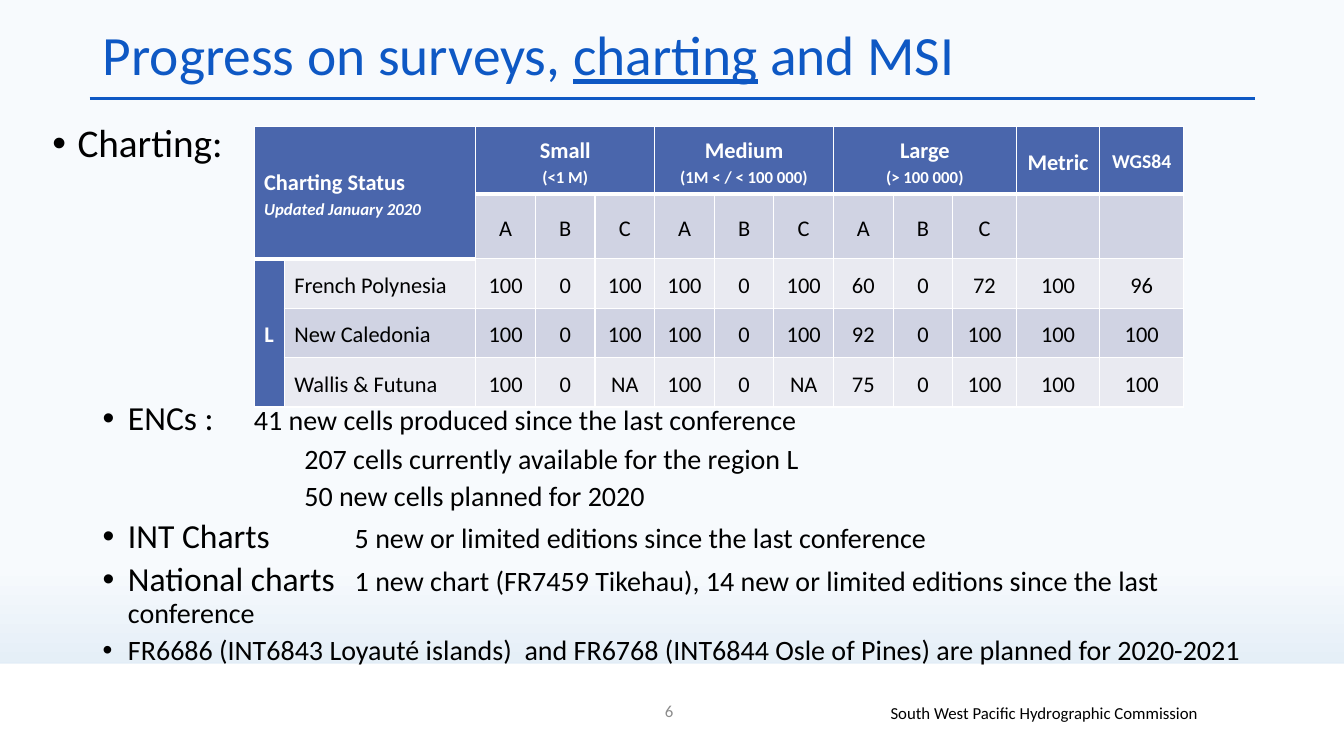
from dataclasses import dataclass

from lxml.etree import SubElement
from pptx import Presentation
from pptx.dml.color import RGBColor
from pptx.enum.shapes import MSO_CONNECTOR, MSO_SHAPE
from pptx.enum.text import MSO_ANCHOR, MSO_AUTO_SIZE, PP_ALIGN
from pptx.oxml.ns import qn
from pptx.util import Pt

FONT = "Calibri"
BLUE = RGBColor(0x0E, 0x58, 0xC4)
HEADER_BLUE = RGBColor(0x4A, 0x66, 0xAC)
BAND_DARK = RGBColor(0xD0, 0xD3, 0xE3)
BAND_LIGHT = RGBColor(0xE9, 0xEA, 0xF1)
SKY_TOP = RGBColor(0xF7, 0xFA, 0xFD)
SKY_BOTTOM = RGBColor(0xD0, 0xE2, 0xF1)
WHITE = RGBColor(0xFF, 0xFF, 0xFF)
BLACK = RGBColor(0, 0, 0)
GREY = RGBColor(0x8C, 0x8C, 0x8C)


@dataclass(frozen=True)
class Span:
    text: str
    size: float
    color: RGBColor = BLACK
    bold: bool = False
    italic: bool = False
    underline: bool = False


@dataclass(frozen=True)
class Item:
    spans: tuple[Span, ...]
    level: int = 1
    margin: float = 54
    before: float = 5
    bullet: bool = True


@dataclass(frozen=True)
class Header:
    lines: tuple[Span, ...]
    column: int
    rows: int = 1
    columns: int = 1
    align: PP_ALIGN = PP_ALIGN.CENTER


def white(text: str, size: float, italic: bool = False) -> Span:
    return Span(text, size, WHITE, bold=True, italic=italic)


HEADERS = (
    Header((white("Charting Status", 16), white("Updated January 2020", 12, True)),
           0, 2, 2, PP_ALIGN.JUSTIFY),
    Header((white("Small", 16), white("(<1 M)", 12)), 2, columns=3),
    Header((white("Medium", 16), white("(1M < / < 100 000)", 12)), 5, columns=3),
    Header((white("Large", 16), white("(> 100 000)", 12)), 8, columns=3),
    Header((white("Metric", 16),), 11),
    Header((white("WGS84", 14),), 12),
)
STATUS_ROWS = (
    ("French Polynesia", "100 0 100 100 0 100 60 0 72 100 96"),
    ("New Caledonia", "100 0 100 100 0 100 92 0 100 100 100"),
    ("Wallis & Futuna", "100 0 NA 100 0 NA 75 0 100 100 100"),
)
COLUMN_WIDTHS = [21.6, 136.8] + [42.6] * 8 + [45.4] + [59.76] * 2
ROW_HEIGHTS = [48, 46.4] + [35.3] * 3

ITEMS = (
    Item((Span("Charting:", 28),), level=0, margin=18, before=0),
    Item((Span("ENCs : \t", 24),
          Span("41 new cells produced since the last conference", 20)), before=168),
    Item((Span("207 cells currently available for the region L", 20),),
         margin=180, bullet=False),
    Item((Span("50 new cells planned for 2020", 20),), margin=180, bullet=False),
    Item((Span("INT Charts\t", 24),
          Span("5 new or limited editions since the last conference", 20))),
    Item((Span("National charts\t", 24),
          Span("1 new chart (FR7459 Tikehau), 14 new or limited editions "
               "since the last conference", 20))),
    Item((Span("FR6686 (INT6843 Loyauté islands)  and FR6768 (INT6844 Osle of Pines) "
               "are planned for 2020-2021", 20),)),
)


def add_span(paragraph, span: Span) -> None:
    run = paragraph.add_run()
    run.text = span.text
    font = run.font
    font.name, font.size = FONT, Pt(span.size)
    font.bold, font.italic, font.underline = span.bold, span.italic, span.underline
    font.color.rgb = span.color


def place(shape, left: float, top: float, width: float, height: float) -> None:
    shape.left, shape.top = Pt(left), Pt(top)
    shape.width, shape.height = Pt(width), Pt(height)


def add_caption(slide, left: float, top: float, width: float, span: Span) -> None:
    frame = slide.shapes.add_textbox(Pt(left), Pt(top), Pt(width), Pt(28.8)).text_frame
    frame.word_wrap = True
    frame.vertical_anchor = MSO_ANCHOR.MIDDLE
    frame.paragraphs[0].alignment = PP_ALIGN.CENTER
    add_span(frame.paragraphs[0], span)


def add_item(paragraph, item: Item) -> None:
    paragraph.level = item.level
    properties = paragraph._p.get_or_add_pPr()
    properties.set("marL", str(Pt(item.margin)))
    properties.set("indent", str(Pt(-18 if item.bullet else 0)))
    properties.set("defTabSz", str(Pt(72)))
    if item.bullet:
        SubElement(properties, qn("a:buFont"), typeface="Arial")
        SubElement(properties, qn("a:buChar"), char="•")
    else:
        SubElement(properties, qn("a:buNone"))
    paragraph.alignment = PP_ALIGN.LEFT
    paragraph.line_spacing = 0.9
    paragraph.space_before = Pt(item.before)
    for span in item.spans:
        add_span(paragraph, span)


def heavy_below(row: int, column: int) -> bool:
    """Tell whether a cell ends the header block."""
    return row == (1 if column < 2 else 0)


def style_cell(cell, row: int, column: int, fill: RGBColor) -> None:
    properties = cell._tc.get_or_add_tcPr()
    widths = {"L": 1, "R": 1,
              "T": 3 if heavy_below(row - 1, column) else 1,
              "B": 3 if heavy_below(row, column) else 1}
    for side, width in widths.items():
        edge = SubElement(properties, qn(f"a:ln{side}"), w=str(Pt(width)))
        solid = SubElement(edge, qn("a:solidFill"))
        SubElement(solid, qn("a:srgbClr"), val=str(WHITE))
    cell.fill.solid()
    cell.fill.fore_color.rgb = fill
    cell.vertical_anchor = MSO_ANCHOR.MIDDLE


def fill_cell(cell, lines: tuple[Span, ...], align: PP_ALIGN = PP_ALIGN.CENTER) -> None:
    for index, line in enumerate(lines):
        frame = cell.text_frame
        paragraph = frame.add_paragraph() if index else frame.paragraphs[0]
        paragraph.alignment = align
        paragraph.line_spacing = 1.15
        add_span(paragraph, line)


def add_status_table(slide) -> None:
    table = slide.shapes.add_table(
        len(ROW_HEIGHTS), len(COLUMN_WIDTHS), Pt(181.5), Pt(90.5),
        Pt(sum(COLUMN_WIDTHS)), Pt(sum(ROW_HEIGHTS))).table
    for column, width in zip(table.columns, COLUMN_WIDTHS):
        column.width = Pt(width)
    for row, height in zip(table.rows, ROW_HEIGHTS):
        row.height = Pt(height)
    for row in range(len(ROW_HEIGHTS)):
        for column in range(len(COLUMN_WIDTHS)):
            is_header = row == 0 or column == 0 or (row, column) == (1, 1)
            band = BAND_DARK if row % 2 else BAND_LIGHT
            style_cell(table.cell(row, column), row, column,
                       HEADER_BLUE if is_header else band)
    for header in HEADERS:
        cell = table.cell(0, header.column)
        if header.rows * header.columns > 1:
            cell.merge(table.cell(header.rows - 1, header.column + header.columns - 1))
        fill_cell(cell, header.lines, header.align)
    for column, grade in enumerate("ABC" * 3, start=2):
        fill_cell(table.cell(1, column), (Span(grade, 16),))
    region = table.cell(2, 0)
    region.merge(table.cell(4, 0))
    fill_cell(region, (white("L", 16),))
    for row, (territory, scores) in enumerate(STATUS_ROWS, start=2):
        fill_cell(table.cell(row, 1), (Span(territory, 16),), PP_ALIGN.JUSTIFY)
        for column, score in enumerate(scores.split(), start=2):
            fill_cell(table.cell(row, column), (Span(score, 16),))


def add_background(slide) -> None:
    fill = slide.background.fill
    fill.gradient()
    fill.gradient_angle = 270
    for stop, color, position in zip(fill.gradient_stops, (SKY_TOP, SKY_BOTTOM), (0.75, 1)):
        stop.color.rgb = color
        stop.position = position
    band = slide.shapes.add_shape(MSO_SHAPE.RECTANGLE, 0, Pt(474), Pt(960), Pt(66))
    band.shadow.inherit = False
    band.fill.solid()
    band.fill.fore_color.rgb = WHITE
    band.line.fill.background()
    rule = slide.shapes.add_connector(
        MSO_CONNECTOR.STRAIGHT, Pt(64), Pt(70.6), Pt(896.4), Pt(70.6))
    rule.line.color.rgb = BLUE
    rule.line.width = Pt(2.25)
    SubElement(rule._element.spPr, qn("a:effectLst"))


def main() -> None:
    deck = Presentation()
    deck.slide_width, deck.slide_height = Pt(960), Pt(540)
    slide = deck.slides.add_slide(deck.slide_layouts[1])
    add_background(slide)

    title = slide.shapes.title
    place(title, 66.2, 20.2, 828, 42.5)
    title.text_frame.auto_size = MSO_AUTO_SIZE.NONE
    title.text_frame.vertical_anchor = MSO_ANCHOR.MIDDLE
    heading = title.text_frame.paragraphs[0]
    heading.alignment = PP_ALIGN.LEFT
    heading.line_spacing = 0.9
    for text in ("Progress on surveys, ", "charting", " and MSI"):
        add_span(heading, Span(text, 39.6, BLUE, underline=text == "charting"))

    add_caption(slide, 619.2, 494.6, 253.4, Span("South West Pacific Hydrographic Commission", 12))
    add_caption(slide, 370, 493.2, 216, Span("6", 12, GREY))
    add_status_table(slide)

    body = slide.placeholders[1]
    place(body, 30.2, 85, 864, 396)
    body.text_frame.auto_size = MSO_AUTO_SIZE.NONE
    for index, item in enumerate(ITEMS):
        frame = body.text_frame
        add_item(frame.add_paragraph() if index else frame.paragraphs[0], item)
    body.element.getparent().append(body.element)

    deck.save("out.pptx")


if __name__ == "__main__":
    main()
